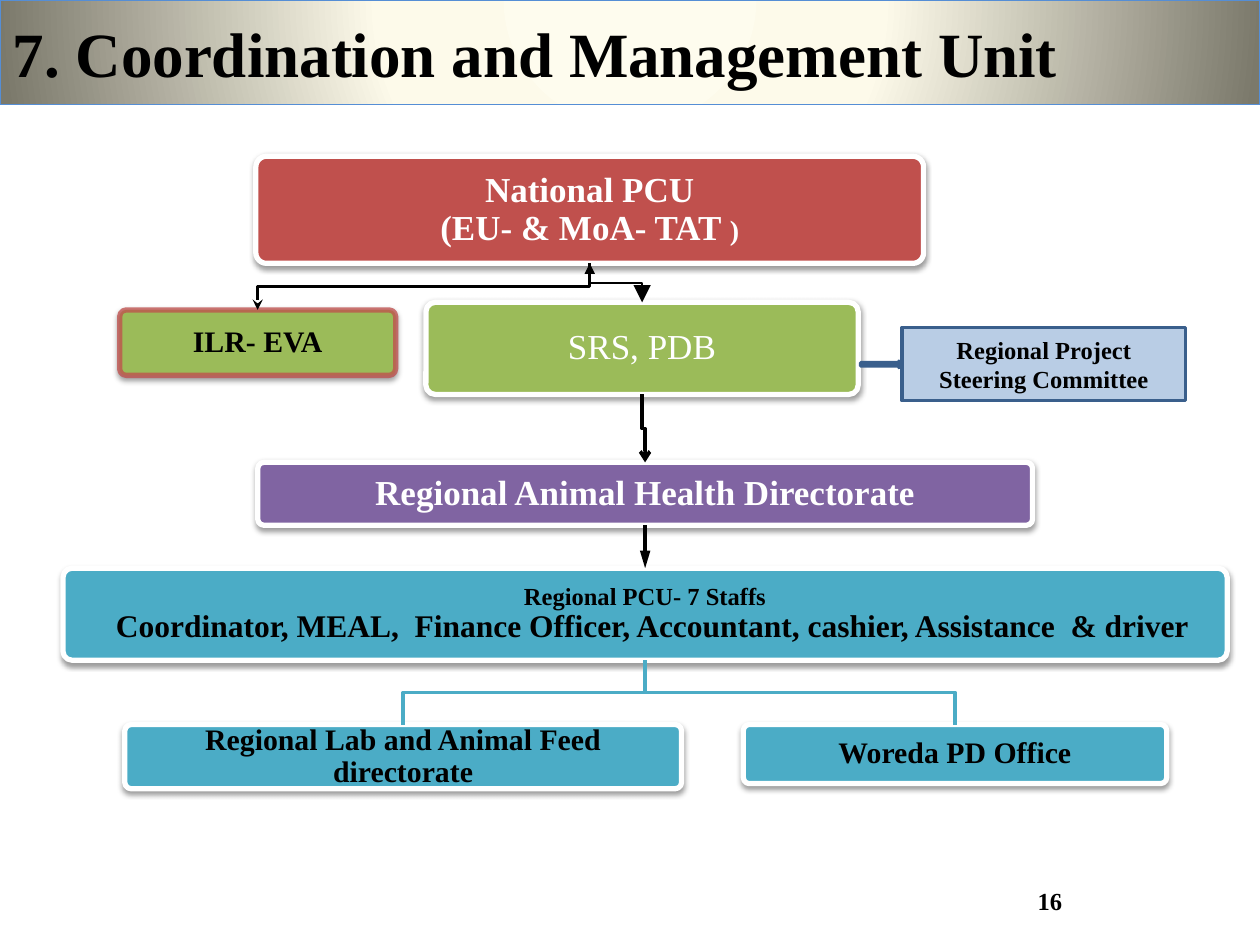
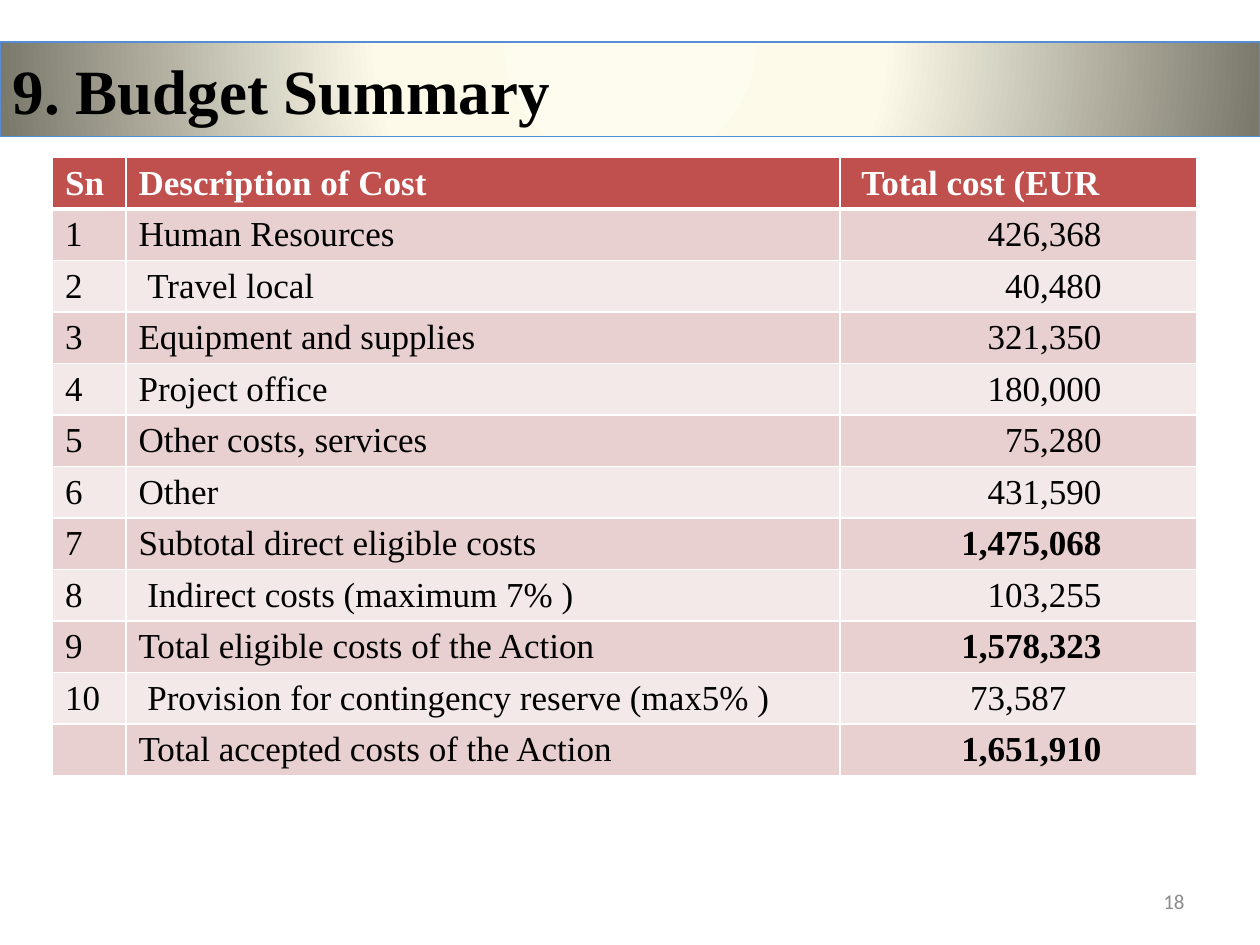
from lxml import etree
from pptx import Presentation
from pptx.dml.color import RGBColor
from pptx.enum.shapes import MSO_CONNECTOR, MSO_SHAPE
from pptx.enum.text import MSO_ANCHOR, PP_ALIGN
from pptx.oxml import parse_xml
from pptx.oxml.ns import qn
from pptx.util import Pt

STRAIGHT = MSO_CONNECTOR.STRAIGHT
RECT, ROUND, ARROW = MSO_SHAPE.RECTANGLE, MSO_SHAPE.ROUNDED_RECTANGLE, MSO_SHAPE.RIGHT_ARROW
MIDDLE = MSO_ANCHOR.MIDDLE
LEFT, CENTER, RIGHT = PP_ALIGN.LEFT, PP_ALIGN.CENTER, PP_ALIGN.RIGHT

SERIF, SANS = "Times New Roman", "Calibri"
NS = 'xmlns:a="http://schemas.openxmlformats.org/drawingml/2006/main"'
COLORS = {
    "black": "000000", "white": "FFFFFF", "grey": "8C8C8C",
    "red": "C0504D", "green": "9BBB59", "violet": "8064A2", "teal": "4BACC6",
    "blue": "4F81BD", "navy": "3A5F8C", "pale": "B9CDE5", "edge": "558ED5",
    "odd": "E8D0D0", "even": "F4E9E9",
}
BAND_STOPS = [(0, "FEFCEE"), (40, "FDFAEA"), (100, "7B796B")]

COLS = [42, 408, 204]
ROW = 29.45
INSET = 7.2
HEAD = ["Sn", "Description of Cost", "Total cost (EUR"]
COSTS = [
    ("1", "Human Resources", "426,368"),
    ("2", "Travel local", "40,480"),
    ("3", "Equipment and supplies", "321,350"),
    ("4", "Project office", "180,000"),
    ("5", "Other costs, services", "75,280"),
    ("6", "Other", "431,590"),
    ("7", "Subtotal direct eligible costs", "1,475,068"),
    ("8", "Indirect costs (maximum 7% )", "103,255"),
    ("9", "Total eligible costs of the Action", "1,578,323"),
    ("10", "Provision for contingency reserve (max5% )", "73,587"),
    ("", "Total accepted costs of the Action", "1,651,910"),
]
INDENTED = {"2", "8", "10"}
SUMS = {"7", "9", ""}


def rgb(name):
    return RGBColor.from_string(COLORS[name])


def style(run, size, color="black", bold=True, font=SERIF):
    run.font.name = font
    run.font.size = Pt(size)
    run.font.bold = bold
    run.font.color.rgb = rgb(color)


def write(frame, text, size, color="black", bold=True, align=CENTER, font=SERIF):
    frame.text = text
    for para in frame.paragraphs:
        para.alignment = align
        for run in para.runs:
            style(run, size, color, bold, font)


def paint(shape, fill, line, width):
    shape.shadow.inherit = False
    shape.fill.solid()
    shape.fill.fore_color.rgb = rgb(fill)
    shape.line.color.rgb = rgb(line)
    shape.line.width = Pt(width)


def new_slide(deck, title, top, height):
    """Add a title-only slide whose title sits on the full-width gradient band."""
    slide = deck.slides.add_slide(deck.slide_layouts[5])
    band = slide.shapes.title
    band.left, band.top, band.width, band.height = 0, Pt(top), Pt(720), Pt(height)
    write(band.text_frame, title, 36, align=LEFT)
    band.text_frame.vertical_anchor = MIDDLE
    band.line.color.rgb = rgb("edge")
    band.line.width = Pt(0.75)
    stops = "".join(f'<a:gs pos="{pos * 1000}"><a:srgbClr val="{color}"/></a:gs>'
                    for pos, color in BAND_STOPS)
    band.line._get_or_add_ln().addprevious(parse_xml(
        f'<a:gradFill {NS} rotWithShape="1"><a:gsLst>{stops}</a:gsLst><a:path path="circle">'
        '<a:fillToRect l="50000" t="-80000" r="50000" b="180000"/></a:path></a:gradFill>'))
    return slide


def add_number(slide, text, size, color, bold, align, font):
    box = slide.shapes.add_textbox(Pt(516), Pt(500.5), Pt(168), Pt(28.75))
    box.text_frame.word_wrap = True
    box.text_frame.vertical_anchor = MIDDLE
    write(box.text_frame, text, size, color, bold, align, font)


def add_box(slide, at, text, fill, size, color="black", bold=True, line="white"):
    """Add a rounded box of the chart, with a soft shadow below it."""
    box = slide.shapes.add_shape(ROUND, *map(Pt, at))
    box.adjustments[0] = 0.1
    paint(box, fill, line, 3)
    glow = box._element.spPr.find(qn("a:effectLst"))
    glow.append(parse_xml(
        f'<a:outerShdw {NS} blurRad="{Pt(3.1)}" dist="{Pt(1.6)}" dir="5400000" rotWithShape="0">'
        '<a:srgbClr val="000000"><a:alpha val="38000"/></a:srgbClr></a:outerShdw>'))
    frame = box.text_frame
    frame.word_wrap = True
    frame.vertical_anchor = MIDDLE
    frame.margin_left = frame.margin_right = Pt(6.25)
    frame.margin_top = frame.margin_bottom = Pt(4)
    write(frame, text, size, color, bold)
    for para in frame.paragraphs:
        para.line_spacing = 0.9
    return box


def add_heads(line, head, tail):
    """Set arrowheads, each given as (type, width, length) or None."""
    ln = line._get_or_add_ln()
    for tag, end in (("a:headEnd", head), ("a:tailEnd", tail)):
        if end:
            kind, width, length = end
            etree.SubElement(ln, qn(tag), type=kind, w=width, len=length)


def add_bend(slide, upper, lower, width, color="black", head=None, tail=None):
    """Draw a line from upper's bottom to lower's top that turns halfway down."""
    x1, y1 = upper.left + upper.width // 2, upper.top + upper.height
    x2, y2 = lower.left + lower.width // 2, lower.top
    mid = (y1 + y2) // 2
    path = slide.shapes.build_freeform(x1, y1)
    path.add_line_segments([(x1, mid), (x2, mid), (x2, y2)], close=False)
    bend = path.convert_to_shape()
    bend.shadow.inherit = False
    bend.fill.background()
    bend.line.color.rgb = rgb(color)
    bend.line.width = Pt(width)
    add_heads(bend.line, head, tail)


def add_drop(slide, upper, lower, width, tail):
    """Join two centred boxes by a straight arrow."""
    drop = slide.shapes.add_connector(STRAIGHT, 0, 0, 0, 0)
    drop.begin_connect(upper, 2)
    drop.end_connect(lower, 0)
    drop.line.color.rgb = rgb("black")
    drop.line.width = Pt(width)
    add_heads(drop.line, None, tail)
    etree.SubElement(drop._element.spPr, qn("a:effectLst"))


def add_chart_of_units(slide):
    nation = add_box(slide, (146.2, 89.3, 381.6, 61.2), "National PCU\n(EU- & MoA- TAT ",
                     "red", 20, "white")
    style(nation.text_frame.paragraphs[1].add_run(), 16, "white")
    nation.text_frame.paragraphs[1].runs[-1].text = ")"
    vet = add_box(slide, (68.4, 177.1, 157.7, 37.4), "ILR- EVA", "green", 17, line="red")
    tint = vet.line._get_or_add_ln().find(".//" + qn("a:srgbClr"))
    etree.SubElement(tint, qn("a:alpha"), val="77000")
    bureau = add_box(slide, (243.4, 172.8, 247, 52.6), "SRS, PDB", "green", 20, "white", False)
    health = add_box(slide, (147.25, 264.2, 442.8, 36), "Regional Animal Health Directorate",
                     "violet", 20, "white")
    staff = add_box(slide, (36, 324.7, 665.3, 52.6),
                    "Regional PCU- 7 Staffs\n"
                    "Coordinator, MEAL,  Finance Officer, Accountant, cashier, Assistance  & driver",
                    "teal", 14)
    roles = staff.text_frame.paragraphs[1]
    roles.alignment = LEFT
    roles.runs[0].font.size = Pt(18)
    roles._p.get_or_add_pPr().set("marL", str(Pt(22.5)))
    lab = add_box(slide, (71.3, 414, 318.2, 36.7), "Regional Lab and Animal Feed directorate",
                  "teal", 17)
    office = add_box(slide, (424.8, 414, 241.9, 33.8), "Woreda PD Office", "teal", 17)

    add_bend(slide, nation, vet, 2, tail=("stealth", "med", "med"))
    add_bend(slide, nation, bureau, 1, head=("triangle", "med", "med"),
             tail=("triangle", "lg", "lg"))
    add_bend(slide, bureau, health, 2, tail=("arrow", "med", "med"))
    add_drop(slide, health, staff, 2, ("triangle", "med", "lg"))
    for unit in (lab, office):
        add_bend(slide, staff, unit, 2, "teal")


def add_board(slide):
    """Add the steering committee and the arrow that leads to it."""
    board = slide.shapes.add_shape(RECT, Pt(515.5), Pt(187.2), Pt(162), Pt(41.8))
    paint(board, "pale", "navy", 2)
    board.text_frame.word_wrap = True
    board.text_frame.vertical_anchor = MIDDLE
    write(board.text_frame, "Regional Project Steering Committee", 14)
    arrow = slide.shapes.add_shape(ARROW, Pt(491.8), Pt(206.4), Pt(23.7), Pt(3.6))
    paint(arrow, "blue", "navy", 2)


def dress(cell, fill, base):
    """Fill a cell and rule it in white, with the given width at its base."""
    cell.fill.solid()
    cell.fill.fore_color.rgb = rgb(fill)
    props = cell._tc.get_or_add_tcPr()
    for spot, (side, width) in enumerate(zip("LRTB", (1, 1, 1, base))):
        props.insert(spot, parse_xml(
            f'<a:ln{side} {NS} w="{Pt(width)}"><a:solidFill>'
            f'<a:srgbClr val="{COLORS["white"]}"/></a:solidFill></a:ln{side}>'))


def add_costs(slide):
    count = len(COSTS) + 1
    table = slide.shapes.add_table(count, len(COLS), Pt(30), Pt(90),
                                   Pt(sum(COLS)), Pt(ROW * count)).table
    for col, width in zip(table.columns, COLS):
        col.width = Pt(width)
    for row in table.rows:
        row.height = Pt(ROW)
    for col, text in enumerate(HEAD):
        cell = table.cell(0, col)
        write(cell.text_frame, text, 20, "white", align=LEFT)
        dress(cell, "red", 3)
    table.cell(0, 2).margin_left = Pt(12.2)

    for row, cost in enumerate(COSTS, 1):
        key = cost[0]
        for col, text in enumerate(cost):
            cell = table.cell(row, col)
            last = col == 2
            write(cell.text_frame, text, 20, bold=last and key in SUMS,
                  align=RIGHT if last else LEFT)
            dress(cell, "odd" if row % 2 else "even", 1)
        table.cell(row, 1).margin_left = Pt(INSET + 5 * (key in INDENTED))
        total = table.cell(row, 2)
        total.vertical_anchor = MIDDLE
        total.margin_top = total.margin_bottom = Pt(0.5)
        total.margin_right = Pt(74.5 if key == "10" else 54.5)


def main():
    deck = Presentation()
    deck.slide_width, deck.slide_height = Pt(720), Pt(540)

    units = new_slide(deck, "7. Coordination and Management Unit", 0, 59.75)
    add_chart_of_units(units)
    add_board(units)
    add_number(units, "16", 14, "black", True, CENTER, SERIF)

    budget = new_slide(deck, "9. Budget Summary", 24, 54)
    add_costs(budget)
    add_number(budget, "18", 12, "grey", False, RIGHT, SANS)

    deck.save("out.pptx")


if __name__ == "__main__":
    main()
